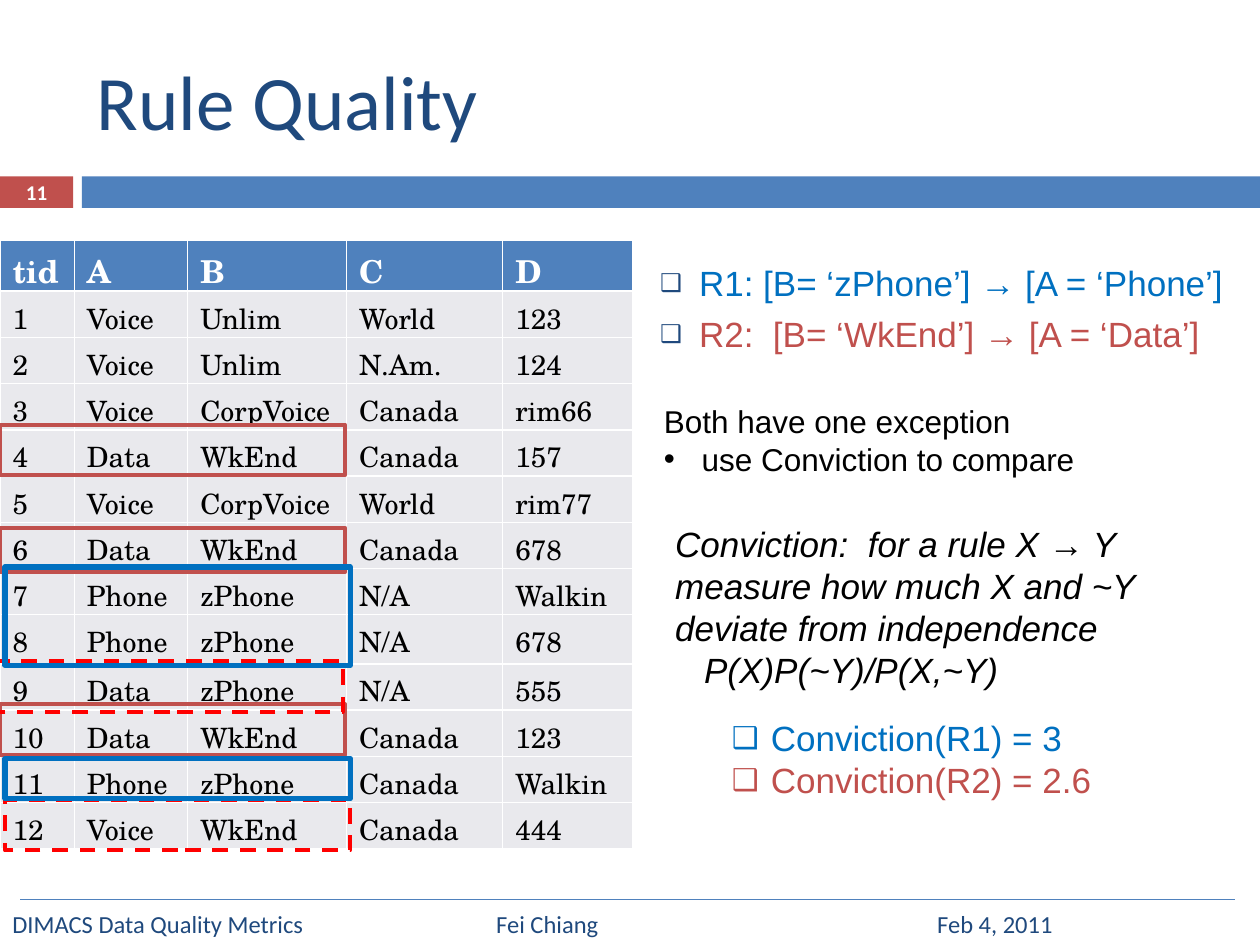
from dataclasses import dataclass

from lxml.etree import SubElement
from pptx import Presentation
from pptx.dml.color import RGBColor
from pptx.enum.dml import MSO_LINE
from pptx.enum.shapes import MSO_CONNECTOR, MSO_SHAPE
from pptx.enum.text import MSO_ANCHOR, PP_ALIGN
from pptx.oxml.ns import qn
from pptx.util import Inches, Pt


@dataclass(frozen=True)
class Theme:
    navy: str = "1F497D"
    accent: str = "4F81BD"
    brick: str = "C0504D"
    blue: str = "0070C0"
    red: str = "FF0000"
    row: str = "E9E9ED"
    white: str = "FFFFFF"
    black: str = "000000"
    sans: str = "Calibri"
    body: str = "Arial"
    serif: str = "TeX Gyre Schola"
    title_size: float = 44
    rule_size: float = 20
    note_size: float = 18
    cell_size: float = 16
    footer_size: float = 14
    number_size: float = 12


THEME = Theme()

HEADER = ["tid", "A", "B", "C", "D"]
CALLS = [
    ["Voice", "Unlim", "World", "123"],
    ["Voice", "Unlim", "N.Am.", "124"],
    ["Voice", "CorpVoice", "Canada", "rim66"],
    ["Data", "WkEnd", "Canada", "157"],
    ["Voice", "CorpVoice", "World", "rim77"],
    ["Data", "WkEnd", "Canada", "678"],
    ["Phone", "zPhone", "N/A", "Walkin"],
    ["Phone", "zPhone", "N/A", "678"],
    ["Data", "zPhone", "N/A", "555"],
    ["Data", "WkEnd", "Canada", "123"],
    ["Phone", "zPhone", "Canada", "Walkin"],
    ["Voice", "WkEnd", "Canada", "444"],
]


def color(value):
    return RGBColor.from_string(value)


def write(paragraph, text, size=THEME.rule_size, font=THEME.body, fill=THEME.black,
          bold=False, italic=False, align=PP_ALIGN.LEFT, before=0, left=0,
          bullet=None, bullet_fill=None, bullet_size=100, tabs=()):
    paragraph.text = text
    paragraph.alignment = align
    paragraph.space_before = Pt(before)
    props = paragraph._p.get_or_add_pPr()
    if left:
        props.set("marL", str(Inches(left)))
    if bullet:
        props.set("indent", str(-Inches(left)))
        tint = SubElement(props, qn("a:buClr"))
        SubElement(tint, qn("a:srgbClr"), val=bullet_fill or fill)
        SubElement(props, qn("a:buSzPct"), val=str(bullet_size * 1000))
        SubElement(props, qn("a:buFont"), typeface=THEME.body)
        SubElement(props, qn("a:buChar"), char=bullet)
    if tabs:
        stops = SubElement(props, qn("a:tabLst"))
        for stop in tabs:
            SubElement(stops, qn("a:tab"), pos=str(Inches(stop)), algn="l")
    style = paragraph.font
    style.size, style.name = Pt(size), font
    style.bold, style.italic = bold, italic
    style.color.rgb = color(fill)


def add_text(slide, box, lines, anchor=MSO_ANCHOR.TOP, **shared):
    frame = slide.shapes.add_textbox(*map(Inches, box)).text_frame
    frame.word_wrap = True
    frame.vertical_anchor = anchor
    for index, (text, own) in enumerate(lines):
        paragraph = frame.add_paragraph() if index else frame.paragraphs[0]
        write(paragraph, text, **{**shared, **own})


def add_box(slide, box, fill=None, line=None, width=2.25, dashed=False):
    rectangle = slide.shapes.add_shape(MSO_SHAPE.RECTANGLE, *map(Inches, box))
    rectangle.shadow.inherit = False
    if fill:
        rectangle.fill.solid()
        rectangle.fill.fore_color.rgb = color(fill)
    else:
        rectangle.fill.background()
    if line:
        rectangle.line.color.rgb = color(line)
        rectangle.line.width = Pt(width)
        if dashed:
            rectangle.line.dash_style = MSO_LINE.DASH
    else:
        rectangle.line.fill.background()


def build_heading(slide, left, top, width, height):
    band_top, band_height, number_width = top + 1.15, 0.25, 0.58
    bar_left = left + 0.65
    add_box(slide, (left, band_top, number_width, band_height), THEME.brick)
    add_box(slide, (bar_left, band_top, left + width - bar_left, band_height), THEME.accent)
    add_text(slide, (left + 0.67, top, 8.92, 1.08), [("Rule Quality", {})], MSO_ANCHOR.MIDDLE,
             size=THEME.title_size, font=THEME.sans, fill=THEME.navy)
    add_text(slide, (left, band_top - 0.01, number_width, band_height + 0.02), [("11", {})],
             MSO_ANCHOR.MIDDLE, size=THEME.number_size, font=THEME.sans, fill=THEME.white,
             bold=True, align=PP_ALIGN.CENTER)


def build_footer(slide, left, top, width, height):
    rule = slide.shapes.add_connector(
        MSO_CONNECTOR.STRAIGHT, Inches(left + 0.16), Inches(top + 0.01),
        Inches(left + width - 0.2), Inches(top + 0.01))
    rule.line.color.rgb = color(THEME.accent)
    rule.line.width = Pt(0.8)
    SubElement(rule._element.spPr, qn("a:effectLst"))
    add_text(slide, (left, top, width, height),
             [("DIMACS Data Quality Metrics\tFei Chiang\tFeb 4, 2011", {})], MSO_ANCHOR.MIDDLE,
             size=THEME.footer_size, font=THEME.sans, fill=THEME.navy, tabs=(3.84, 7.34))


def build_calls(slide, left, top, width, height):
    rows = [HEADER] + [[str(tid), *call] for tid, call in enumerate(CALLS, 1)]
    table = slide.shapes.add_table(
        len(rows), len(HEADER), *map(Inches, (left, top, width, height))).table
    for column, column_width in zip(table.columns, (0.59, 0.9, 1.26, 1.24, 1.03)):
        column.width = Inches(column_width)
    for index, values in enumerate(rows):
        head = index == 0
        table.rows[index].height = Inches(0.39 if index in (0, 8) else 0.33)
        for cell, value in zip(table.rows[index].cells, values):
            cell.fill.solid()
            cell.fill.fore_color.rgb = color(THEME.accent if head else THEME.row)
            write(cell.text_frame.paragraphs[0], value, font=THEME.serif, bold=head,
                  size=THEME.note_size if head else THEME.cell_size,
                  fill=THEME.white if head else THEME.black)


def build_highlights(slide, left, top, width, height):
    exception = dict(line=THEME.red, dashed=True)
    weekend = dict(line=THEME.brick)
    phone = dict(line=THEME.blue, width=3)
    marks = [
        (0.04, 4.44, 0.4, exception),
        (0, 1.46, 0.4, weekend),
        (0, 2.28, 0.35, weekend),
        (0, 3.68, 0.4, weekend),
        (-0.02, 3.34, 0.4, exception),
        (0.04, 2.59, 0.78, phone),
        (0.04, 4.11, 0.32, phone),
    ]
    for shift, drop, mark_height, look in marks:
        add_box(slide, (left + shift, top + drop, width, mark_height), **look)


def build_rules(slide, left, top, width, height):
    add_text(slide, (left, top, width, 0.84), [
        ("R1: [B= ‘zPhone’] → [A = ‘Phone’]", dict(fill=THEME.blue)),
        ("R2:  [B= ‘WkEnd’] → [A = ‘Data’]", dict(fill=THEME.brick, before=5)),
    ], left=0.31, bullet="❑", bullet_fill=THEME.navy, bullet_size=70)
    add_text(slide, (left + 0.03, top + 1.11, 4.38, 0.91), [
        ("Both have one exception", {}),
        ("use Conviction to compare", dict(left=0.3, bullet="•")),
    ], size=THEME.note_size)
    add_text(slide, (left + 0.12, top + 2.07, 3.95, 1.75), [
        ("Conviction:  for a rule X → Y", {}),
        ("measure how much X and ~Y", {}),
        ("deviate from independence", {}),
        ("P(X)P(~Y)/P(X,~Y)", dict(left=0.23)),
    ], italic=True)
    add_text(slide, (left + 0.57, top + 3.61, 3.54, 0.77), [
        ("Conviction(R1) = 3", dict(fill=THEME.blue)),
        ("Conviction(R2) = 2.6", dict(fill=THEME.brick)),
    ], left=0.31, bullet="❑", bullet_size=86)


def main():
    deck = Presentation()
    deck.slide_width, deck.slide_height = Inches(10), Inches(7.5)
    slide = deck.slides.add_slide(deck.slide_layouts[6])
    build_heading(slide, 0, 0.25, 10, 1.4)
    build_footer(slide, 0, 7.13, 10, 0.4)
    build_calls(slide, 0, 1.91, 5.02, 4.82)
    build_rules(slide, 5.14, 2.03, 4.86, 4.38)
    build_highlights(slide, 0, 1.91, 2.74, 4.82)
    deck.save("out.pptx")


if __name__ == "__main__":
    main()
